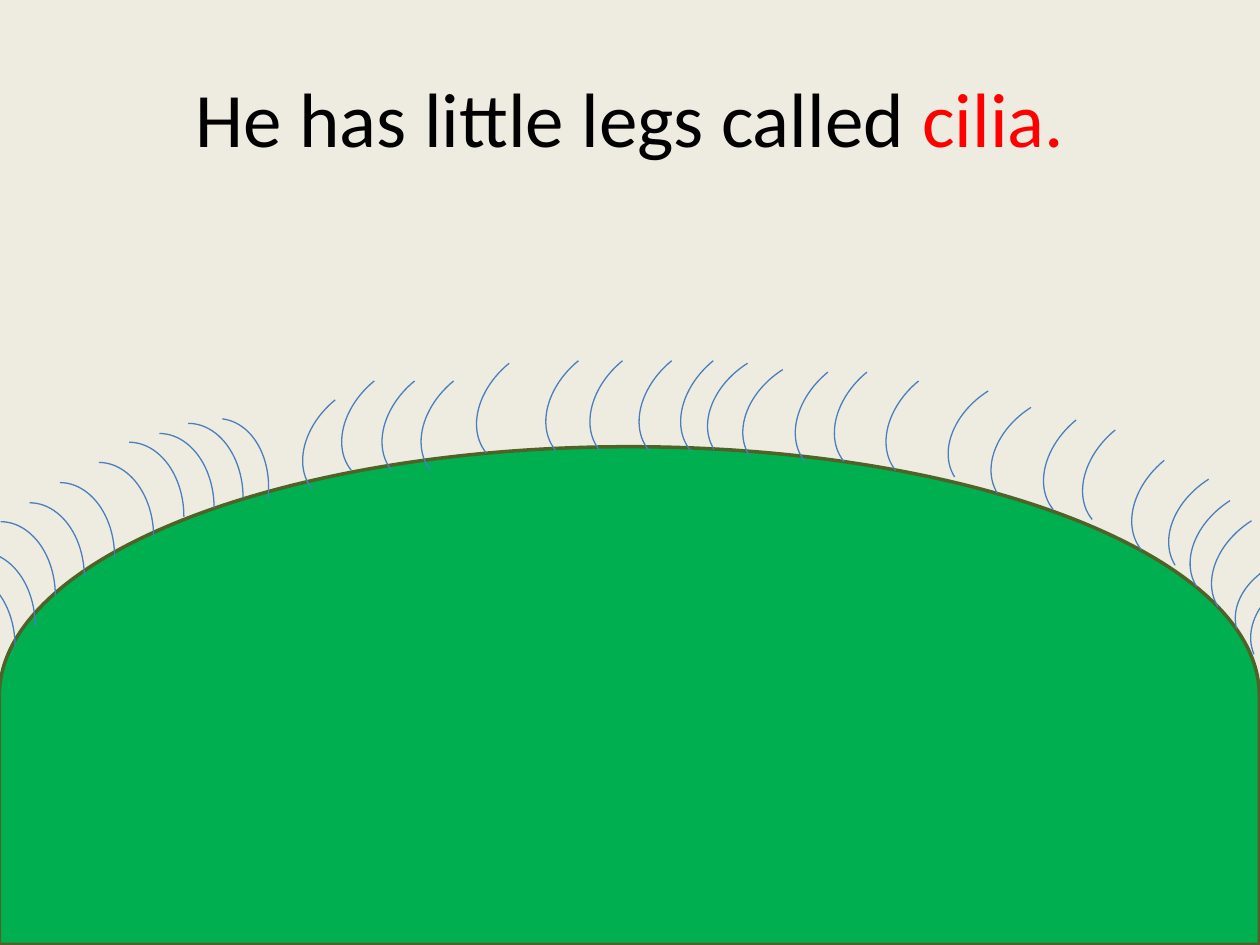
from pptx import Presentation
from pptx.dml.color import RGBColor
from pptx.enum.shapes import MSO_SHAPE
from pptx.enum.text import MSO_ANCHOR, PP_ALIGN
from pptx.util import Inches, Pt

ARC = MSO_SHAPE.ARC
DELAY = MSO_SHAPE.FLOWCHART_DELAY
MIDDLE = MSO_ANCHOR.MIDDLE
CENTER = PP_ALIGN.CENTER
TITLE_ONLY = 5

COLUMNS, ROWS = 100, 75
CILIUM_SIZE = (8.7, 11.8)
CILIA = {
    0: [(3.5, 36.7), (5.9, 35.1), (8.3, 34.4), (10.6, 33.6), (0.4, 38.3),
        (-2, 39.9), (-4.3, 41.4), (-5.9, 43.8), (-7.5, 45.4)],
    6.9: [(12.6, 33.2)],
    230.8: [(38.8, 26.3), (44.3, 26.1), (47.8, 26.1), (51.7, 26.1),
            (34.4, 27.7), (31.3, 27.7), (28.1, 27.7), (55, 26.1),
            (25, 29.2), (64.1, 27), (67.2, 27), (71.3, 27.7),
            (83.8, 30.8), (86.9, 31.6), (90.8, 34)],
    237.7: [(60.1, 27.1), (76.4, 28.8), (79.8, 30.1), (93.9, 35.8),
            (57.3, 26.6), (95.6, 37.5), (97.3, 39.1)],
    255.5: [(99.5, 42.5)],
    246.9: [(100.6, 43.7)],
}


def color(value):
    return RGBColor.from_string(value)


def apply(target, values):
    for name, value in values.items():
        setattr(target, name, value)


class PageBuilder:
    font = {"name": "Calibri", "size": Pt(44), "bold": False}

    def __init__(self, deck, background):
        self.column = deck.slide_width / COLUMNS
        self.row = deck.slide_height / ROWS
        self.page = deck.slides.add_slide(deck.slide_layouts[TITLE_ONLY])
        fill = self.page.background.fill
        fill.solid()
        fill.fore_color.rgb = color(background)

    def place(self, left, top, width, height):
        return {"left": round(left * self.column), "top": round(top * self.row),
                "width": round(width * self.column), "height": round(height * self.row)}

    def title(self, area, spans):
        box = self.page.shapes.title
        apply(box, self.place(*area))
        apply(box.text_frame, {"vertical_anchor": MIDDLE, "word_wrap": True})
        para = box.text_frame.paragraphs[0]
        para.alignment = CENTER
        for text, shade in spans:
            span = para.add_run()
            span.text = text
            apply(span.font, self.font)
            span.font.color.rgb = color(shade)

    def shape(self, kind, area, line, weight, fill=None, rotation=0):
        item = self.page.shapes.add_shape(kind, **self.place(*area))
        item.rotation = rotation
        item.shadow.inherit = False
        item.line.color.rgb = color(line)
        item.line.width = Pt(weight)
        if fill:
            item.fill.solid()
            item.fill.fore_color.rgb = color(fill)
        else:
            item.fill.background()


def main():
    deck = Presentation()
    apply(deck, {"slide_width": Inches(10), "slide_height": Inches(7.5)})
    builder = PageBuilder(deck, "EEECE1")
    builder.title((5, 3, 90, 12.5), [("He has little legs called ", "000000"),
                                     ("cilia.", "FF0000")])
    builder.shape(DELAY, (30.2, 5.2, 39.5, 100), "4F6228", 2, "00B050", 270)
    for angle, corners in CILIA.items():
        for corner in corners:
            builder.shape(ARC, corner + CILIUM_SIZE, "4B7EBC", 0.75, rotation=angle)
    deck.save("out.pptx")


if __name__ == "__main__":
    main()
